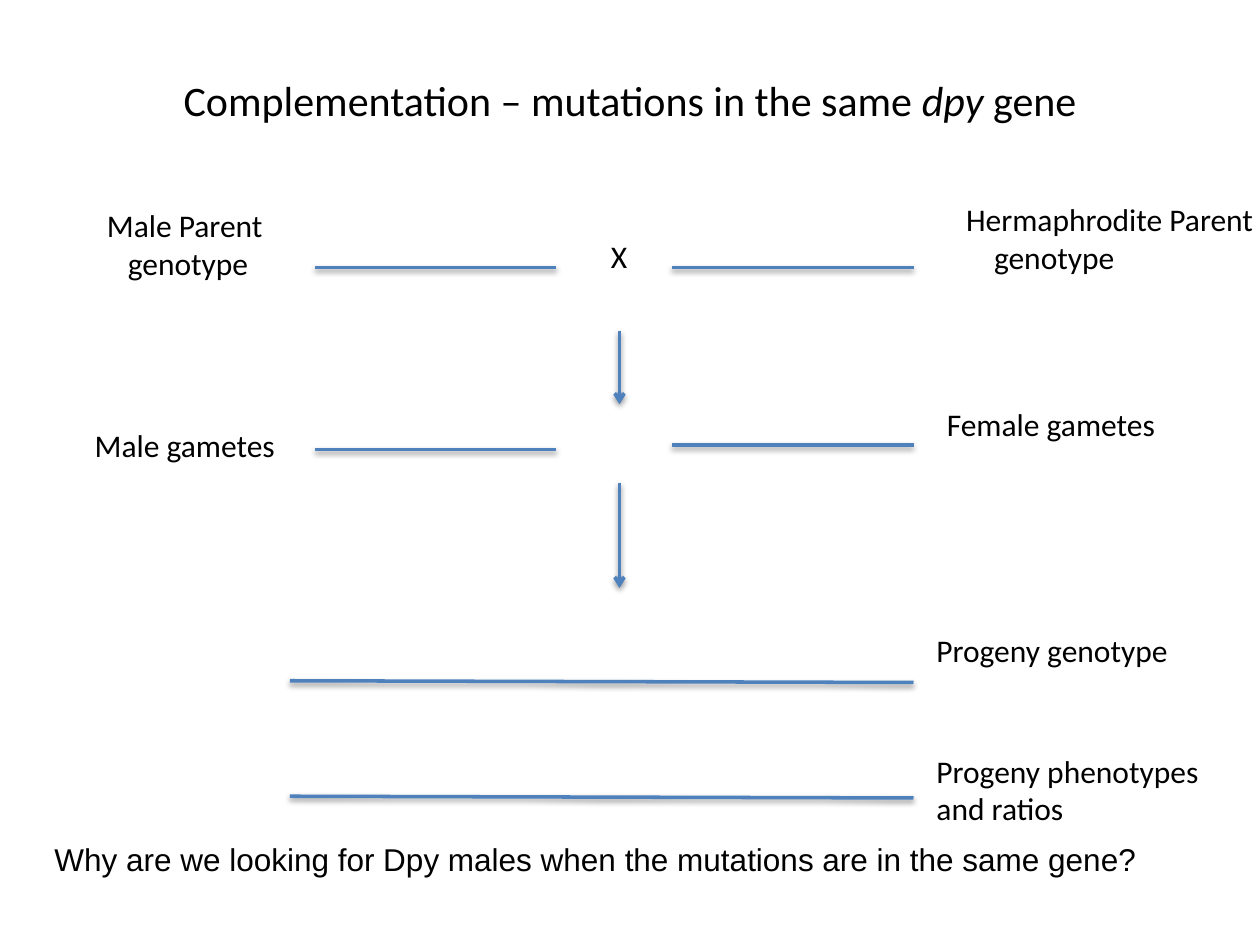
from lxml import etree
from pptx import Presentation
from pptx.dml.color import RGBColor
from pptx.enum.shapes import MSO_CONNECTOR
from pptx.enum.text import MSO_ANCHOR, PP_ALIGN
from pptx.oxml import parse_xml
from pptx.oxml.ns import qn
from pptx.util import Pt

STRAIGHT = MSO_CONNECTOR.STRAIGHT
MIDDLE, TOP = MSO_ANCHOR.MIDDLE, MSO_ANCHOR.TOP
CENTER, LEFT = PP_ALIGN.CENTER, PP_ALIGN.LEFT

SHADOW = """<a:effectLst xmlns:a="http://schemas.openxmlformats.org/drawingml/2006/main">
  <a:outerShdw blurRad="40000" dist="20000" dir="5400000" rotWithShape="0">
    <a:srgbClr val="000000"><a:alpha val="38000"/></a:srgbClr>
  </a:outerShdw>
</a:effectLst>"""


def rgb(value):
    return RGBColor.from_string(value)


class CrossSlide:
    text_color = "000000"
    line_color = "4F81BD"
    line_width = 2

    def __init__(self, slide):
        self.slide = slide

    def text(self, box, paragraphs, size=18, font="Calibri", wrap=False,
             align=LEFT, anchor=TOP):
        """Each paragraph is (left indent, [(words, italic), ...])."""
        tf = self.slide.shapes.add_textbox(*map(Pt, box)).text_frame
        tf.word_wrap = wrap
        tf.vertical_anchor = anchor
        style = {"name": font, "size": Pt(size)}
        for i, (indent, runs) in enumerate(paragraphs):
            p = tf.add_paragraph() if i else tf.paragraphs[0]
            p.alignment = align
            if indent:
                p._p.get_or_add_pPr().set("marL", str(Pt(indent)))
            for words, italic in runs:
                r = p.add_run()
                r.text = words
                for key, value in {**style, "italic": italic}.items():
                    setattr(r.font, key, value)
                r.font.color.rgb = rgb(self.text_color)

    def label(self, box, *lines, indent=0, **style):
        """Plain lines, with every line after the first indented."""
        self.text(box, [(indent if i else 0, [(line, False)])
                        for i, line in enumerate(lines)], **style)

    def line(self, x1, y1, x2, y2, arrow=False):
        sp = self.slide.shapes.add_connector(STRAIGHT, *map(Pt, (x1, y1, x2, y2)))
        sp.line.color.rgb = rgb(self.line_color)
        sp.line.width = Pt(self.line_width)
        if arrow:
            etree.SubElement(sp.line._get_or_add_ln(), qn("a:tailEnd"), type="arrow")
        sp._element.spPr.append(parse_xml(SHADOW))


def main():
    prs = Presentation()
    prs.slide_width, prs.slide_height = Pt(720), Pt(540)
    s = CrossSlide(prs.slides.add_slide(prs.slide_layouts[6]))

    s.text((54, 30, 612, 54),
           [(0, [("Complementation – mutations in the same ", False),
                 ("dpy ", True), ("gene", False)])],
           size=24, wrap=True, align=CENTER, anchor=MIDDLE)

    s.label((545, 111, 180, 51), "Hermaphrodite Parent", "genotype", indent=16)
    s.label((54, 114, 104.4, 51), "Male Parent", "genotype", indent=12)
    s.label((342, 132, 24, 29), "X")
    s.label((47, 240, 118.8, 29), "Male gametes")
    s.label((534, 228, 134.6, 29), "Female gametes")
    s.label((528, 357, 148.3, 51), "Progeny genotype")
    s.label((528, 426, 166.3, 51), "Progeny phenotypes", "and ratios")
    s.label((24, 476.6, 652, 29),
            "Why are we looking for Dpy males when the mutations are in the same gene?",
            font="Arial", wrap=True)

    for male_y, female_y in ((153, 153), (257, 254.3)):
        s.line(180, male_y, 318, male_y)
        s.line(384, female_y, 522, female_y)
    for top, bottom in ((189, 231), (276, 336)):
        s.line(354, top, 354, bottom, arrow=True)
    for y in (389, 455):
        s.line(165.6, y, 522, y + 1)

    prs.save("out.pptx")


if __name__ == "__main__":
    main()
